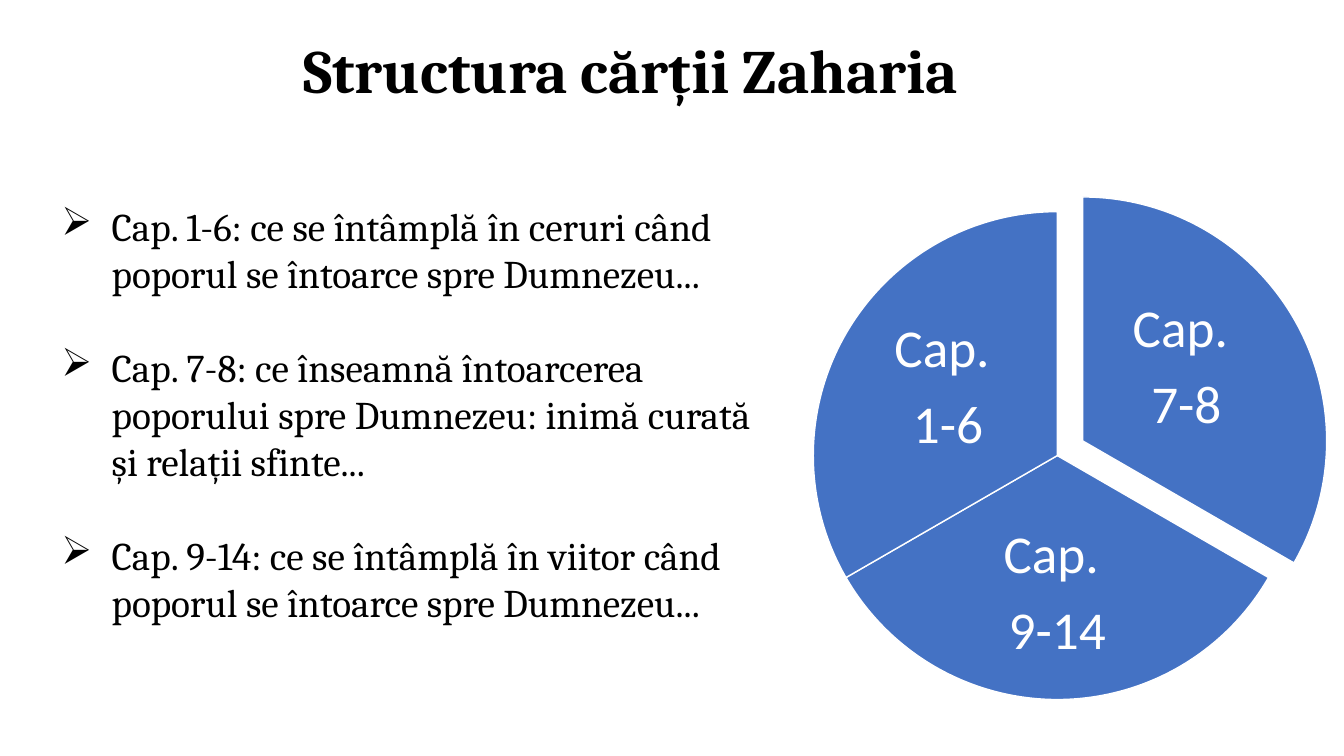
import math
from dataclasses import dataclass

import pptx
import pptx.dml.color
import pptx.enum.shapes
import pptx.enum.text
import pptx.oxml
import pptx.oxml.ns
import pptx.util

Pt = pptx.util.Pt
ALIGN = pptx.enum.text.PP_ALIGN
ANCHOR = pptx.enum.text.MSO_ANCHOR


@dataclass(frozen=True)
class Theme:
    ink: str = "000000"
    paper: str = "FFFFFF"
    blue: str = "4472C4"
    serif: str = "Cambria"
    sans: str = "Calibri"
    head: int = 44
    body: int = 28
    label: int = 38


THEME = Theme()

POINTS = [
    "Cap. 1-6: ce se întâmplă în ceruri când poporul se întoarce spre Dumnezeu...",
    "Cap. 7-8: ce înseamnă întoarcerea poporului spre Dumnezeu: inimă curată și relații sfinte...",
    "Cap. 9-14: ce se întâmplă în viitor când poporul se întoarce spre Dumnezeu...",
]

SLICES = [
    ("7-8", 21, (74, -52), (118, 116)),
    ("9-14", 0, (0, 99), (158, 108)),
    ("1-6", 0, (-78, -48), (118, 116)),
]


def color(code):
    return pptx.dml.color.RGBColor.from_string(code)


def style(para, face, size, code, bold=False):
    for run in para.runs:
        font = run.font
        font.name, font.size, font.bold = face, Pt(size), bold
        font.color.rgb = color(code)


def add_title(slide, box, text):
    title = slide.shapes.title
    title.left, title.top, title.width, title.height = map(Pt, box)
    frame = title.text_frame
    frame.text = text
    frame.vertical_anchor = ANCHOR.MIDDLE
    para = frame.paragraphs[0]
    para.alignment = ALIGN.CENTER
    para.line_spacing = 0.9
    style(para, THEME.serif, THEME.head, THEME.ink, True)


def add_list(slide, box, items):
    frame = slide.shapes.add_textbox(*map(Pt, box)).text_frame
    frame.word_wrap = True
    frame.text = "\n".join(items)
    for rank, para in enumerate(frame.paragraphs):
        props = para._p.get_or_add_pPr()
        props.set("marL", str(Pt(36)))
        props.set("indent", str(Pt(-36)))
        bullet = pptx.oxml.parse_xml(
            f'<a:buChar {pptx.oxml.ns.nsdecls("a")} char="➢"/>')
        props.append(bullet)
        if rank:
            para.space_before = Pt(33.6)
        style(para, THEME.serif, THEME.body, THEME.ink)


def add_label(slide, box, text):
    frame = slide.shapes.add_textbox(*map(Pt, box)).text_frame
    frame.word_wrap = True
    frame.vertical_anchor = ANCHOR.MIDDLE
    frame.margin_left = frame.margin_right = Pt(3.8)
    frame.margin_top = frame.margin_bottom = Pt(3.8)
    frame.text = text
    for para in frame.paragraphs:
        para.alignment = ALIGN.CENTER
        para.line_spacing = 0.9
        para.space_after = Pt(13)
        style(para, THEME.sans, THEME.label, THEME.paper)


def add_pie(slide, box, slices):
    left, top, width, height = box
    sweep = 360 / len(slices)
    for rank, (name, pull, shift, size) in enumerate(slices):
        start = (270 + rank * sweep) % 360
        mid = math.radians(start + sweep / 2)
        x = left + pull * math.cos(mid)
        y = top + pull * math.sin(mid)
        wedge = slide.shapes.add_shape(
            pptx.enum.shapes.MSO_SHAPE.PIE, Pt(x), Pt(y), Pt(width), Pt(height))
        wedge.adjustments[0] = start * 0.6
        wedge.adjustments[1] = (start + sweep) % 360 * 0.6
        wedge.shadow.inherit = False
        wedge.fill.solid()
        wedge.fill.fore_color.rgb = color(THEME.blue)
        wedge.line.color.rgb = color(THEME.paper)
        wedge.line.width = Pt(1)
        wide, high = size
        spot = (x + width / 2 + shift[0] - wide / 2,
                y + height / 2 + shift[1] - high / 2, wide, high)
        add_label(slide, spot, f"Cap. \n{name}")


def main():
    deck = pptx.Presentation()
    deck.slide_width, deck.slide_height = Pt(960), Pt(540)
    slide = deck.slides.add_slide(deck.slide_layouts[5])
    add_title(slide, (36.7, 0, 828, 104.4), "Structura cărții Zaharia")
    add_pie(slide, (581, 151.2, 348.5, 348.5), SLICES)
    add_list(slide, (36.7, 141, 519, 346), POINTS)
    deck.save("out.pptx")


if __name__ == "__main__":
    main()
